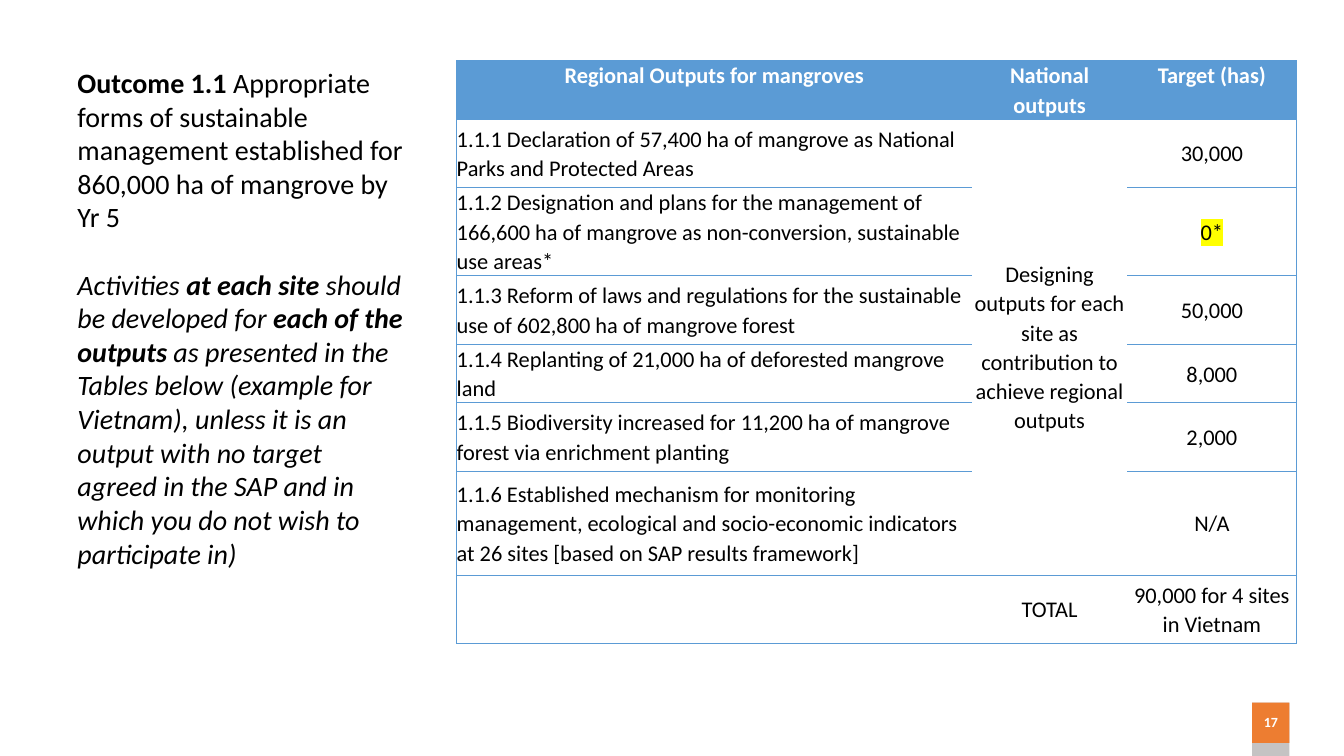
from dataclasses import dataclass

from lxml import etree
from pptx import Presentation
from pptx.dml.color import RGBColor
from pptx.enum.shapes import MSO_SHAPE
from pptx.enum.text import MSO_ANCHOR, PP_ALIGN
from pptx.oxml.ns import qn
from pptx.util import Inches, Pt

LEFT, CENTER = PP_ALIGN.LEFT, PP_ALIGN.CENTER
TOP, MIDDLE = MSO_ANCHOR.TOP, MSO_ANCHOR.MIDDLE
RECTANGLE = MSO_SHAPE.RECTANGLE


@dataclass(frozen=True)
class Theme:
    font: str = "Calibri"
    black: str = "000000"
    white: str = "FFFFFF"
    blue: str = "5B9BD5"
    orange: str = "ED7D31"
    gray: str = "C5C3C3"
    yellow: str = "FFFF00"
    outcome_size: float = 20
    table_size: float = 16
    page_size: float = 10
    rule_width: float = 0.5


@dataclass(frozen=True)
class Phrase:
    text: str
    bold: bool = False
    italic: bool = False


@dataclass(frozen=True)
class Output:
    regional: str
    national: str
    target: str
    height: float
    highlighted: bool = False


@dataclass(frozen=True)
class Block:
    top: float
    height: float
    color: str


THEME = Theme()
COLUMN_WIDTHS = (5.11, 1.54, 1.68)
NATIONAL = 1
OUTPUTS = (
    Output("Regional Outputs for mangroves", "National outputs", "Target (has)", 0.57),
    Output("1.1.1 Declaration of 57,400 ha of mangrove as National Parks and Protected Areas",
           "Designing outputs for each site as contribution to achieve regional outputs",
           "30,000", 0.68),
    Output("1.1.2 Designation and plans for the management of 166,600 ha of mangrove as "
           "non-conversion, sustainable use areas*", "", "0*", 0.85, highlighted=True),
    Output("1.1.3 Reform of laws and regulations for the sustainable use of 602,800 ha of "
           "mangrove forest", "", "50,000", 0.68),
    Output("1.1.4 Replanting of 21,000 ha of deforested mangrove land", "", "8,000", 0.57),
    Output("1.1.5 Biodiversity increased for 11,200 ha of mangrove forest via enrichment "
           "planting", "", "2,000", 0.68),
    Output("1.1.6 Established mechanism for monitoring management, ecological and "
           "socio-economic indicators at 26 sites [based on SAP results framework]",
           "", "N/A", 1.03),
    Output("", "TOTAL", "90,000 for 4 sites in Vietnam", 0.68),
)
OUTCOME = (
    (Phrase("Outcome 1.1", bold=True),
     Phrase(" Appropriate forms of sustainable management established for 860,000 ha of "
            "mangrove by Yr 5")),
    (Phrase("Activities ", italic=True),
     Phrase("at each site", bold=True, italic=True),
     Phrase(" should be developed for ", italic=True),
     Phrase("each of the outputs", bold=True, italic=True),
     Phrase(" as presented in the Tables below (example for Vietnam), unless it is an output "
            "with no target agreed in the SAP and in which you do not wish to participate in)",
            italic=True)),
)
PAGE_BLOCKS = (Block(6.97, 0.53, THEME.gray), Block(6.97, 0.4, THEME.orange))


def style_run(run, size: float, color: str, bold: bool = False, italic: bool = False) -> None:
    run.font.name = THEME.font
    run.font.size = Pt(size)
    run.font.bold = bold
    run.font.italic = italic
    run.font.color.rgb = RGBColor.from_string(color)


def highlight(run) -> None:
    mark = etree.Element(qn("a:highlight"))
    etree.SubElement(mark, qn("a:srgbClr"), val=THEME.yellow)
    run.font._element.find(qn("a:solidFill")).addnext(mark)


def rule_cell(cell, ruled: str) -> None:
    """Rule the named sides (from L, R, T, B) and leave the others open."""
    properties = cell._tc.get_or_add_tcPr()
    for place, side in enumerate("LRTB"):
        line = etree.Element(qn(f"a:ln{side}"), w=str(Pt(THEME.rule_width)))
        if side in ruled:
            paint = etree.SubElement(line, qn("a:solidFill"))
            etree.SubElement(paint, qn("a:srgbClr"), val=THEME.blue)
        else:
            etree.SubElement(line, qn("a:noFill"))
        properties.insert(place, line)


def fill_cell(cell, text: str, row: int, column: int, highlighted: bool) -> None:
    header = row == 0
    cell.margin_left = cell.margin_right = cell.margin_top = cell.margin_bottom = 0
    cell.vertical_anchor = TOP if header else MIDDLE
    if header:
        cell.fill.solid()
        cell.fill.fore_color.rgb = RGBColor.from_string(THEME.blue)
    else:
        cell.fill.background()

    sides = "L" if column == 0 else "R" if column == len(COLUMN_WIDTHS) - 1 else ""
    rule_cell(cell, sides if cell.is_spanned else sides + "TB")
    if not text:
        return
    paragraph = cell.text_frame.paragraphs[0]
    paragraph.text = text
    paragraph.alignment = CENTER if header or column else LEFT
    paragraph.line_spacing = 1.07
    paragraph.space_after = Pt(8)
    run = paragraph.runs[0]
    style_run(run, THEME.table_size, THEME.white if header else THEME.black, bold=header)
    if highlighted:
        highlight(run)


def add_outputs_table(slide) -> None:
    frame = slide.shapes.add_table(
        len(OUTPUTS), len(COLUMN_WIDTHS), Inches(4.53), Inches(0.6),
        Inches(sum(COLUMN_WIDTHS)), Inches(sum(output.height for output in OUTPUTS)))
    table = frame.table
    table.horz_banding = False
    for column, width in enumerate(COLUMN_WIDTHS):
        table.columns[column].width = Inches(width)
    # One national entry covers every regional output
    table.cell(1, NATIONAL).merge(table.cell(len(OUTPUTS) - 2, NATIONAL))
    for row, output in enumerate(OUTPUTS):
        table.rows[row].height = Inches(output.height)
        texts = (output.regional, output.national, output.target)
        for column, text in enumerate(texts):
            marked = output.highlighted and text == output.target
            fill_cell(table.cell(row, column), text, row, column, marked)


def add_outcome(slide) -> None:
    box = slide.shapes.add_textbox(Inches(0.67), Inches(0.6), Inches(3.47), Inches(5.15))
    frame = box.text_frame
    frame.word_wrap = True
    for index, phrases in enumerate(OUTCOME):
        paragraph = frame.add_paragraph() if index else frame.paragraphs[0]
        paragraph.space_before = Pt(24 if index else 0)
        for phrase in phrases:
            run = paragraph.add_run()
            run.text = phrase.text
            style_run(run, THEME.outcome_size, THEME.black, phrase.bold, phrase.italic)


def add_block(slide, block: Block):
    shape = slide.shapes.add_shape(
        RECTANGLE, Inches(12.42), Inches(block.top), Inches(0.37), Inches(block.height))
    shape.shadow.inherit = False
    shape.fill.solid()
    shape.fill.fore_color.rgb = RGBColor.from_string(block.color)
    shape.line.fill.background()
    return shape


def add_page_number(slide, number: str) -> None:
    _, badge = [add_block(slide, block) for block in PAGE_BLOCKS]
    frame = badge.text_frame
    frame.margin_left = frame.margin_right = 0
    frame.vertical_anchor = MIDDLE
    paragraph = frame.paragraphs[0]
    paragraph.text = number
    paragraph.alignment = CENTER
    paragraph.line_spacing = 0.9
    style_run(paragraph.runs[0], THEME.page_size, THEME.white, bold=True)


def main() -> None:
    presentation = Presentation()
    presentation.slide_width = Inches(13.33)
    presentation.slide_height = Inches(7.5)
    slide = presentation.slides.add_slide(presentation.slide_layouts[6])
    add_outputs_table(slide)
    add_outcome(slide)
    add_page_number(slide, "17")
    presentation.save("out.pptx")


if __name__ == "__main__":
    main()
